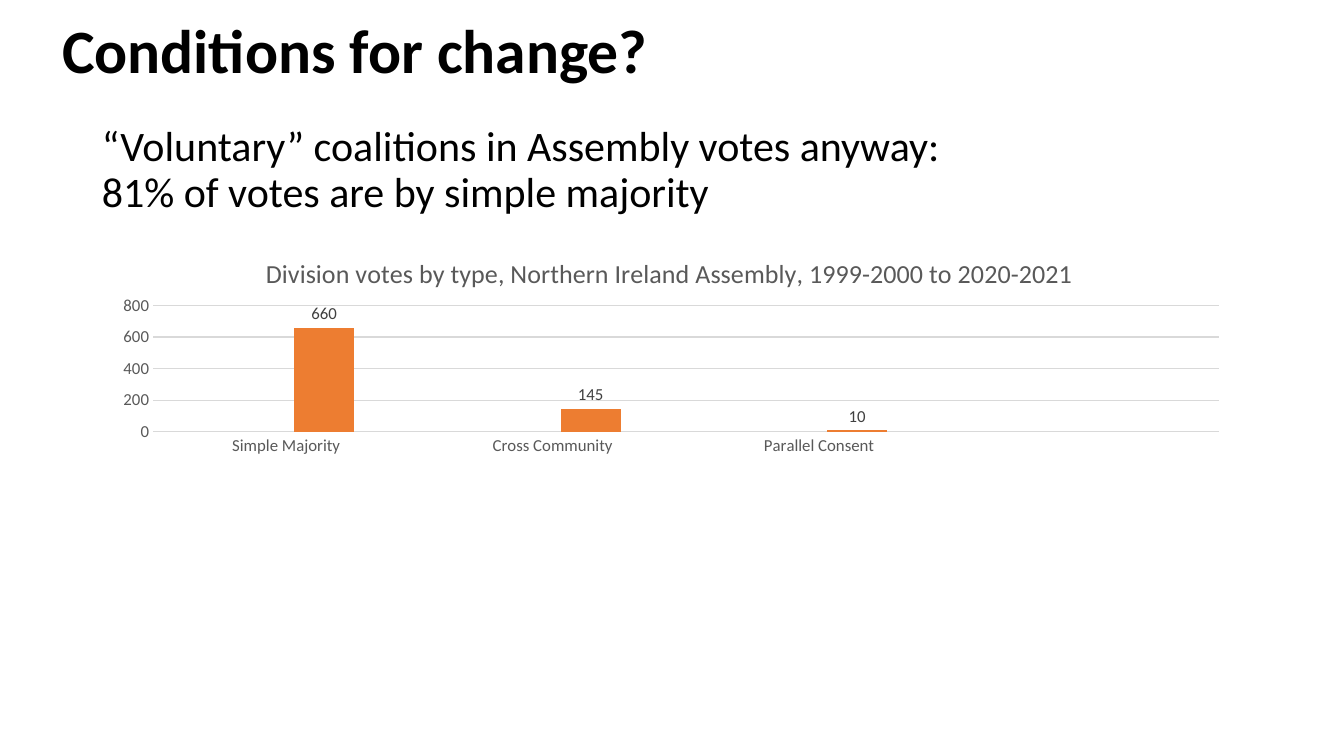
from lxml import etree
from pptx import Presentation
from pptx.chart.data import CategoryChartData
from pptx.dml.color import RGBColor
from pptx.enum.chart import XL_CHART_TYPE, XL_LABEL_POSITION, XL_TICK_MARK
from pptx.enum.text import MSO_ANCHOR, MSO_AUTO_SIZE, PP_ALIGN
from pptx.oxml.ns import qn
from pptx.util import Pt

COLUMNS = XL_CHART_TYPE.COLUMN_CLUSTERED
OUTSIDE = XL_LABEL_POSITION.OUTSIDE_END
NO_TICK = XL_TICK_MARK.NONE
MIDDLE = MSO_ANCHOR.MIDDLE
NO_FIT = MSO_AUTO_SIZE.NONE
LEFT = PP_ALIGN.LEFT

FONT = "Calibri"
COLORS = {
    "text": "000000",
    "chart_text": "595959",
    "label": "404040",
    "grid": "D9D9D9",
    "blue": "4472C4",
    "orange": "ED7D31",
}
CHART_WIDTH, CHART_HEIGHT = 815, 290.9


def color(name):
    return RGBColor.from_string(COLORS[name])


def style_font(font, size, color_name, bold=False):
    font.name = FONT
    font.size = Pt(size)
    font.bold = bold
    font.color.rgb = color(color_name)


def place(shape, left, top, width, height):
    shape.left, shape.top = Pt(left), Pt(top)
    shape.width, shape.height = Pt(width), Pt(height)


def fill_text(box, text, size, bold=False):
    frame = box.text_frame
    frame.word_wrap = True
    frame.auto_size = NO_FIT
    frame.vertical_anchor = MIDDLE
    para = frame.paragraphs[0]
    para.text = text
    para.alignment = LEFT
    para.line_spacing = 0.9
    style_font(para.font, size, "text", bold)


def style_line(line, color_name):
    line.color.rgb = color(color_name)
    line.width = Pt(0.75)


def set_layout(layout, left, top, width=None, height=None):
    """Fix a chart part, measured in points from the chart's corner."""
    for child in list(layout):
        layout.remove(child)
    manual = etree.SubElement(layout, qn("c:manualLayout"))
    values = [("xMode", "edge"), ("yMode", "edge"),
              ("x", left / CHART_WIDTH), ("y", top / CHART_HEIGHT)]
    if width:
        values.insert(0, ("layoutTarget", "inner"))
        values += [("w", width / CHART_WIDTH), ("h", height / CHART_HEIGHT)]
    for tag, value in values:
        etree.SubElement(manual, qn("c:" + tag)).set("val", str(value))


def style_axes(chart):
    categories, values = chart.category_axis, chart.value_axis
    for axis in (categories, values):
        axis.major_tick_mark = axis.minor_tick_mark = NO_TICK
        style_font(axis.tick_labels.font, 12, "chart_text")
    style_line(categories.format.line, "grid")
    values.format.line.fill.background()
    values.has_major_gridlines = True
    style_line(values.major_gridlines.format.line, "grid")
    values.minimum_scale, values.maximum_scale = 0, 800
    values.major_unit = 200


def style_series(plot):
    plot.gap_width, plot.overlap = 219, -27
    plot.vary_by_categories = False
    for series, name in zip(plot.series, ("blue", "orange")):
        series.format.fill.solid()
        series.format.fill.fore_color.rgb = color(name)
    labels = plot.series[1].data_labels
    labels.show_value = True
    labels.position = OUTSIDE
    style_font(labels.font, 12, "label")


def add_vote_chart(page):
    data = CategoryChartData()
    data.categories = ["Simple Majority", "Cross Community", "Parallel Consent", ""]
    data.add_series("Series 1", [None] * 4)
    data.add_series("Column1", [660, 145, 10, None])
    chart = page.shapes.add_chart(
        COLUMNS, Pt(72), Pt(164.9), Pt(CHART_WIDTH), Pt(CHART_HEIGHT), data).chart
    style_font(chart.font, 10, "text")
    chart.has_legend = False

    # Chart title
    chart.has_title = True
    title = chart.chart_title
    title.include_in_layout = False
    para = title.text_frame.paragraphs[0]
    para.text = "Division votes by type, Northern Ireland Assembly, 1999-2000 to 2020-2021"
    style_font(para.font, 18.6, "chart_text")

    style_axes(chart)
    style_series(chart.plots[0])

    # Plot and title positions
    area = chart.element.find(".//" + qn("c:plotArea"))
    layout = area.find(qn("c:layout"))
    if layout is None:
        layout = etree.Element(qn("c:layout"))
        area.insert(0, layout)
    set_layout(layout, 37.3, 53.3, 761.4, 90.3)
    heading = chart.element.find(".//" + qn("c:title"))
    layout = heading.find(qn("c:layout"))
    if layout is None:
        layout = etree.Element(qn("c:layout"))
        heading.find(qn("c:tx")).addnext(layout)
    set_layout(layout, 114.5, 14)


def main():
    deck = Presentation()
    deck.slide_width, deck.slide_height = Pt(960), Pt(540)
    page = deck.slides.add_slide(deck.slide_layouts[5])

    # Statement
    statement = page.shapes.title
    place(statement, 65.5, 69.8, 828, 104.4)
    fill_text(statement, "“Voluntary” coalitions in Assembly votes anyway:\v"
              "81% of votes are by simple majority", 30)

    # Votes by type
    add_vote_chart(page)

    # Heading
    heading = page.shapes.add_textbox(Pt(37.4), Pt(-7.2), Pt(828), Pt(91.4))
    fill_text(heading, "Conditions for change?", 44, bold=True)

    deck.save("out.pptx")


if __name__ == "__main__":
    main()
